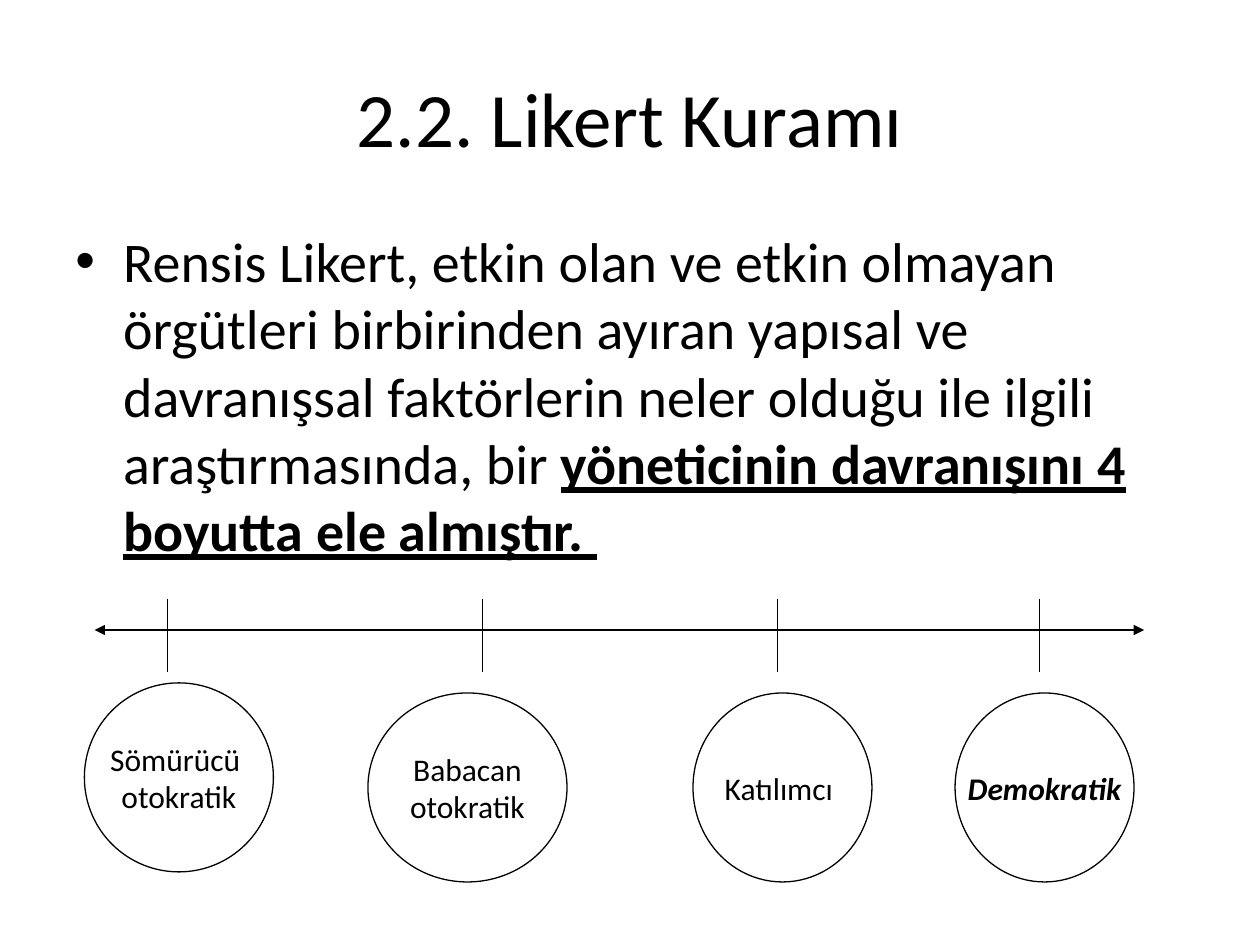
import pptx
import pptx.util
import pptx.dml.color
import pptx.enum.shapes
import pptx.enum.text
import pptx.oxml.ns
from lxml import etree

Inches, Pt = pptx.util.Inches, pptx.util.Pt
BLACK = pptx.dml.color.RGBColor(0, 0, 0)
CENTER = pptx.enum.text.PP_ALIGN.CENTER
MIDDLE = pptx.enum.text.MSO_ANCHOR.MIDDLE
qn = pptx.oxml.ns.qn

deck = pptx.Presentation()
deck.slide_width, deck.slide_height = Inches(10), Inches(7.5)
slide = deck.slides.add_slide(deck.slide_layouts[6])


def style_run(run, size, bold=False, italic=False, underline=False):
    font = run.font
    font.name, font.size, font.color.rgb = "Calibri", Pt(size), BLACK
    font.bold, font.italic, font.underline = bold, italic, underline


def add_line(x1, y1, x2, y2):
    line = slide.shapes.add_connector(
        pptx.enum.shapes.MSO_CONNECTOR.STRAIGHT,
        Inches(x1), Inches(y1), Inches(x2), Inches(y2))
    line.line.color.rgb, line.line.width = BLACK, Pt(0.75)
    etree.SubElement(line._element.spPr, qn("a:effectLst"))
    return line


# Title
title = slide.shapes.add_textbox(Inches(0.5), Inches(0.3), Inches(9), Inches(1.25)).text_frame
title.word_wrap = True
title.vertical_anchor = MIDDLE
title.text = "2.2. Likert Kuramı"
title.paragraphs[0].alignment = CENTER
style_run(title.paragraphs[0].runs[0], 44)

# Bulleted statement
body = slide.shapes.add_textbox(Inches(0.5), Inches(1.75), Inches(9), Inches(4.95)).text_frame
body.word_wrap = True
statement = body.paragraphs[0]
statement.space_before = Pt(6.4)
for words, emphasis in [
    ("Rensis Likert, etkin olan ve etkin olmayan örgütleri birbirinden ayıran yapısal ve "
     "davranışsal faktörlerin neler olduğu ile ilgili araştırmasında, bir ", False),
    ("yöneticinin davranışını 4 boyutta ele almıştır. ", True),
]:
    run = statement.add_run()
    run.text = words
    style_run(run, 32, bold=emphasis, underline=emphasis)
bullet = statement._p.get_or_add_pPr()
bullet.set("marL", str(Inches(0.38)))
bullet.set("indent", str(-Inches(0.38)))
etree.SubElement(bullet, qn("a:buFont"), typeface="Arial")
etree.SubElement(bullet, qn("a:buChar"), char="•")

# Leadership axis, with an arrowhead at each end
axis = add_line(0.75, 5, 9.08, 5)
for end in ("a:headEnd", "a:tailEnd"):
    etree.SubElement(axis.line._get_or_add_ln(), qn(end), type="triangle")

# Four leadership styles: tick x, circle left, top, width, label, emphasis
styles = [
    (1.33, 0.67, 5.42, 1.5, "Sömürücü \notokratik", False),
    (3.83, 2.92, 5.5, 1.58, "Babacan\notokratik", False),
    (6.17, 5.5, 5.5, 1.42, "Katılımcı ", False),
    (8.25, 7.58, 5.5, 1.42, "Demokratik", True),
]
for tick, left, top, width, label, emphasis in styles:
    add_line(tick, 4.75, tick, 5.33)
    circle = slide.shapes.add_shape(
        pptx.enum.shapes.MSO_SHAPE.OVAL,
        Inches(left), Inches(top), Inches(width), Inches(1.5))
    circle.shadow.inherit = False
    circle.fill.background()
    circle.line.color.rgb, circle.line.width = BLACK, Pt(0.75)
    caption = circle.text_frame
    caption.word_wrap = False
    caption.vertical_anchor = MIDDLE
    caption.text = label
    for paragraph in caption.paragraphs:
        paragraph.alignment = CENTER
        style_run(paragraph.runs[0], 18, bold=emphasis, italic=emphasis)

deck.save("out.pptx")
